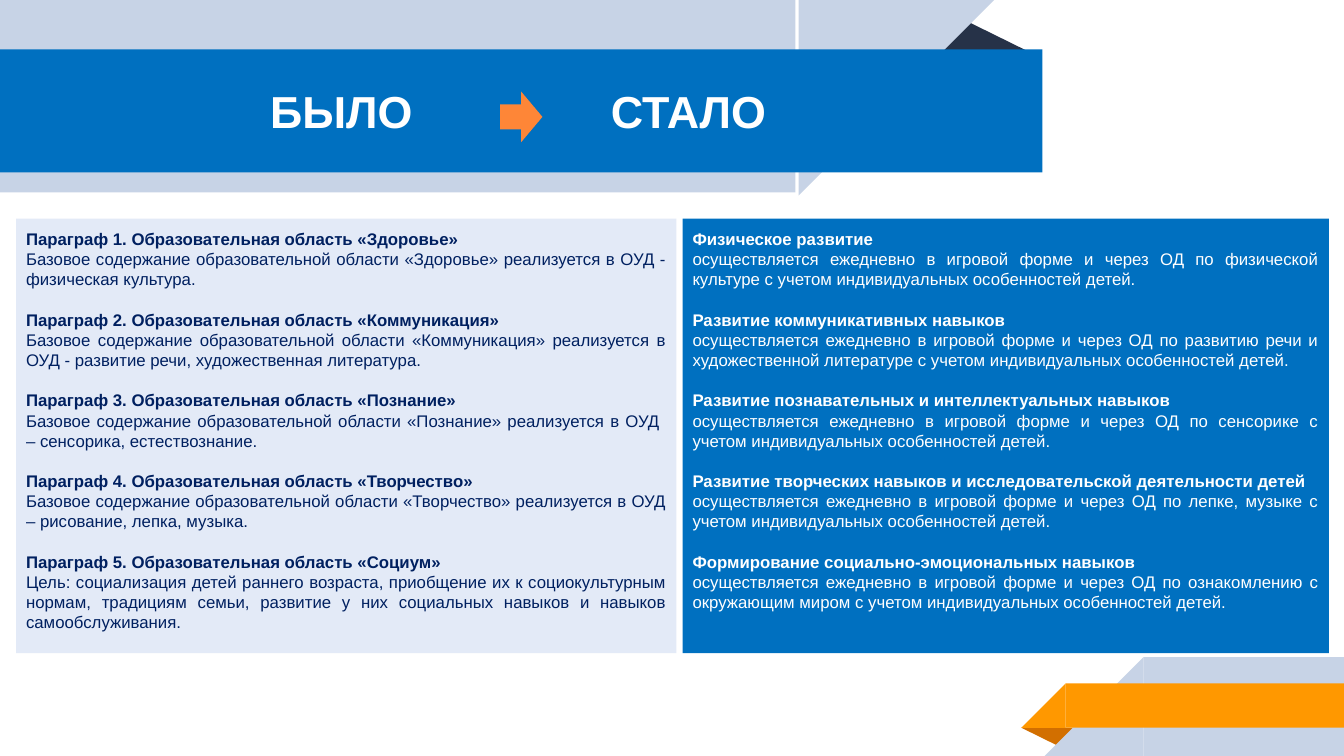
"""Build the slide comparing the former and the new education areas."""
from lxml.etree import SubElement
from pptx import Presentation
from pptx.dml.color import RGBColor
from pptx.enum.shapes import MSO_SHAPE
from pptx.enum.text import MSO_ANCHOR, PP_ALIGN
from pptx.oxml.ns import qn
from pptx.util import Inches, Pt

NAVY, WHITE, BLUE, PALE = "002060", "FFFFFF", "0070C0", "C7D3E6"
LINE_HEIGHT = Pt(14.4)


def add_block(slide, kind, box, color, rotation=0):
    shape = slide.shapes.add_shape(kind, *(Inches(length) for length in box))
    shape.shadow.inherit = False
    shape.fill.solid()
    shape.fill.fore_color.rgb = RGBColor.from_string(color)
    shape.line.fill.background()
    shape.rotation = rotation
    return shape


def add_text(paragraph, text, color, size, bold):
    run = paragraph.add_run()
    run.text = text
    font_format = {"name": "Arial", "size": Pt(size), "bold": bold}
    for name, value in font_format.items():
        setattr(run.font, name, value)
    run.font.color.rgb = RGBColor.from_string(color)


presentation = Presentation()
presentation.slide_width = Inches(13.33)
presentation.slide_height = Inches(7.5)
slide = presentation.slides.add_slide(presentation.slide_layouts[6])

RECTANGLE, CORNER, FOLD = MSO_SHAPE.RECTANGLE, MSO_SHAPE.RIGHT_TRIANGLE, MSO_SHAPE.ISOSCELES_TRIANGLE
ribbons = [
    (FOLD, (9.18, 0.19, 1.14, 0.38), "263248", 0),
    (RECTANGLE, (0, 0, 7.89, 1.91), PALE, 0),
    (CORNER, (7.92, 0, 1.94, 1.94), PALE, 90),
    (FOLD, (10.13, 7.22, 0.57, 0.19), "D26F00", 180),
    (RECTANGLE, (11.34, 6.52, 1.99, 0.98), PALE, 0),
    (CORNER, (10.36, 6.52, 0.98, 0.98), PALE, 270),
    (RECTANGLE, (10.57, 6.78, 2.76, 0.44), "FF9800", 0),
    (CORNER, (10.13, 6.78, 0.44, 0.44), "FF9800", 270),
]
for kind, box, color, rotation in ribbons:
    ribbon = add_block(slide, kind, box, color, rotation)
    if kind == FOLD:
        ribbon.adjustments[0] = 0.324

former_areas = [
    ("Здоровье", "Базовое содержание образовательной области «Здоровье» реализуется в ОУД - физическая культура."),
    ("Коммуникация", "Базовое содержание образовательной области «Коммуникация» реализуется в ОУД - развитие речи, художественная литература."),
    ("Познание", "Базовое содержание образовательной области «Познание» реализуется в ОУД  – сенсорика, естествознание."),
    ("Творчество", "Базовое содержание образовательной области «Творчество» реализуется в ОУД – рисование, лепка, музыка."),
    ("Социум", "Цель: социализация детей раннего возраста, приобщение их к социокультурным нормам, традициям семьи, развитие у них социальных навыков и навыков самообслуживания."),
]
new_areas = [
    ("Физическое развитие", "физической культуре"),
    ("Развитие коммуникативных навыков", "развитию речи и художественной литературе"),
    ("Развитие познавательных и интеллектуальных навыков", "сенсорике"),
    ("Развитие творческих навыков и исследовательской деятельности детей", "лепке, музыке"),
    ("Формирование социально-эмоциональных навыков", "ознакомлению с окружающим миром"),
]
former_entries = [
    (f"Параграф {number}. Образовательная область «{area}»", content)
    for number, (area, content) in enumerate(former_areas, 1)
]
new_entries = [
    (skill, f"осуществляется ежедневно в игровой форме и через ОД по {subject} с учетом индивидуальных особенностей детей.")
    for skill, subject in new_areas
]

panels = [
    (0.16, 6.55, "E3EAF7", NAVY, former_entries),
    (6.77, 6.41, BLUE, WHITE, new_entries),
]
for left, width, fill, color, entries in panels:
    frame = add_block(slide, RECTANGLE, (left, 2.17, width, 4.31), fill).text_frame
    frame_format = {"word_wrap": True, "vertical_anchor": MSO_ANCHOR.TOP}
    for side in ("left", "right", "top", "bottom"):
        frame_format[f"margin_{side}"] = Inches(0.1)
    for name, value in frame_format.items():
        setattr(frame, name, value)
    for index, (heading, content) in enumerate(entries):
        for text, bold in ((heading, True), (content, False)):
            first = index == 0 and bold
            paragraph = frame.paragraphs[0] if first else frame.add_paragraph()
            paragraph_format = {
                "alignment": PP_ALIGN.JUSTIFY,
                "line_spacing": LINE_HEIGHT,
                "space_before": LINE_HEIGHT if bold and not first else Pt(0),
            }
            for name, value in paragraph_format.items():
                setattr(paragraph, name, value)
            add_text(paragraph, text, color, 12, bold)

banner = add_block(slide, RECTANGLE, (0, 0.49, 10.34, 1.22), BLUE)
banner.text_frame.margin_left = Inches(2.68)
banner.text_frame.vertical_anchor = MSO_ANCHOR.MIDDLE
title = banner.text_frame.paragraphs[0]
title.alignment = PP_ALIGN.LEFT
tab_list = SubElement(title._p.get_or_add_pPr(), qn("a:tabLst"))
SubElement(tab_list, qn("a:tab"), pos=str(Inches(3.38)), algn="l")
add_text(title, "БЫЛО\tСТАЛО", WHITE, 32, True)

add_block(slide, MSO_SHAPE.RIGHT_ARROW, (4.96, 0.91, 0.42, 0.5), "FE8637")

presentation.save("out.pptx")
